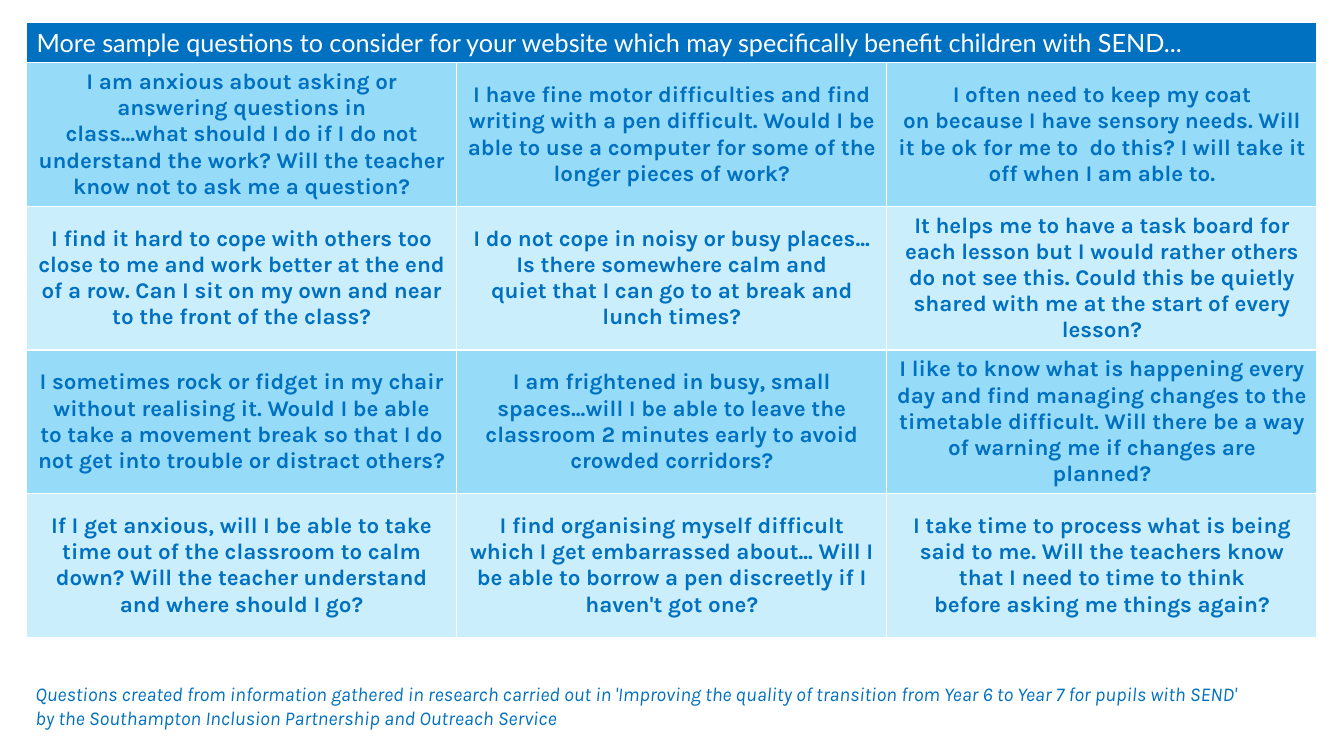
from dataclasses import dataclass

from pptx import Presentation
from pptx.dml.color import RGBColor
from pptx.enum.text import MSO_ANCHOR, MSO_AUTO_SIZE, PP_ALIGN
from pptx.util import Cm, Pt

LEFT = PP_ALIGN.LEFT
CENTER = PP_ALIGN.CENTER
MIDDLE = MSO_ANCHOR.MIDDLE
GROW = MSO_AUTO_SIZE.SHAPE_TO_FIT_TEXT
NBSP = chr(160)


@dataclass(frozen=True)
class Theme:
    blue: str = "0070C0"
    white: str = "FFFFFF"
    bands: tuple = ("96DCF8", "CAEEFB")
    head_font: str = "Lato"
    body_font: str = "Karla"
    head_size: int = 18
    body_size: int = 16
    note_size: int = 14


TITLE = (
    "More sample questions to consider for your website which may "
    "specifically benefit children with SEND..."
)

# "~" marks a space that keeps its two words on one line.
ASKS = [
    [
        "I am anxious about~asking or answering questions in class...what~should I do "
        "if I~do not understand the work? Will the teacher know not to~ask me a question?",
        "I have fine motor difficulties and~find writing with a pen difficult. Would I "
        "be able to use a computer~for some of the longer pieces of work?",
        "I~often need~to~keep my coat on~because I have sensory needs. Will it be ok "
        "for me to ~do this? I will~take it off~when I am able to.",
    ],
    [
        "I find it hard to cope with others too close to me and work better at the end "
        "of a row.~Can~I sit on my own and near to the front of the class?",
        "I~do not cope in noisy or busy places... Is there somewhere calm and "
        "quiet~that I can go to at~break and lunch times?",
        "It helps me to have a task board for each lesson but I would rather others do "
        "not see this.~Could~this be quietly shared with me~at the start of every lesson?",
    ],
    [
        "I~sometimes rock or fidget in my chair without realising it.~Would I be able "
        "to~take a movement break~so that I do not get~into trouble or distract others?",
        "I am frightened in busy,~small spaces...will I be able to leave the "
        "classroom~2 minutes early~to avoid crowded corridors?",
        "I like to know what is happening every day and find managing changes to the "
        "timetable~difficult.~Will there be a way of~warning me~if changes are planned?",
    ],
    [
        "If I get anxious, will I be able to take time out of the classroom~to calm "
        "down? Will the teacher understand and where~should I go?",
        "I find organising myself~difficult which~I get embarrassed about...~Will I be "
        "able to borrow a pen discreetly if I haven't got one?",
        "I take~time to process what is being said to me.~Will the teachers know that I "
        "need to time~to think before~asking me things again?",
    ],
]

NOTES = [
    "Questions created from information gathered~in~research~carried out in 'Improving "
    "the quality of transition from Year 6 to Year 7 for pupils with SEND'",
    "by the Southampton~Inclusion Partnership and Outreach Service",
]


def write(para, text, font, size, color, bold=False, italic=False, align=LEFT):
    para.alignment = align
    run = para.add_run()
    run.text = text.replace("~", NBSP)
    run.font.name = font
    run.font.size = Pt(size)
    run.font.bold = bold
    run.font.italic = italic
    run.font.color.rgb = RGBColor.from_string(color)


class Page:
    def __init__(self, slide, theme):
        self.slide = slide
        self.theme = theme

    def cell(self, cell, text, fill, **style):
        cell.fill.solid()
        cell.fill.fore_color.rgb = RGBColor.from_string(fill)
        cell.vertical_anchor = MIDDLE
        write(cell.text_frame.paragraphs[0], text, **style)

    def table(self, title, rows, left, top, col_width, head_height, row_height):
        look = self.theme
        cols = len(rows[0])
        grid = self.slide.shapes.add_table(
            len(rows) + 1, cols, Cm(left), Cm(top),
            Cm(col_width * cols), Cm(head_height + row_height * len(rows)),
        ).table
        for col in grid.columns:
            col.width = Cm(col_width)
        for i, row in enumerate(grid.rows):
            row.height = Cm(row_height if i else head_height)
        head = grid.cell(0, 0)
        head.merge(grid.cell(0, cols - 1))
        self.cell(head, title, look.blue, font=look.head_font,
                  size=look.head_size, color=look.white)
        for i, row in enumerate(rows):
            band = look.bands[i % len(look.bands)]
            for j, text in enumerate(row):
                self.cell(grid.cell(i + 1, j), text, band, font=look.body_font,
                          size=look.body_size, color=look.blue, bold=True, align=CENTER)

    def note(self, lines, left, top, width, height):
        look = self.theme
        box = self.slide.shapes.add_textbox(Cm(left), Cm(top), Cm(width), Cm(height))
        frame = box.text_frame
        frame.word_wrap = True
        frame.auto_size = GROW
        for i, line in enumerate(lines):
            para = frame.add_paragraph() if i else frame.paragraphs[0]
            write(para, line, font=look.body_font, size=look.note_size,
                  color=look.blue, italic=True)


def main():
    deck = Presentation()
    deck.slide_width = Cm(33.87)
    deck.slide_height = Cm(19.05)
    page = Page(deck.slides.add_slide(deck.slide_layouts[6]), Theme())
    page.table(TITLE, ASKS, left=0.67, top=0.56, col_width=10.84,
               head_height=1.02, row_height=3.62)
    page.note(NOTES, left=0.64, top=17.07, width=32.36, height=1.45)
    deck.save("out.pptx")


if __name__ == "__main__":
    main()
